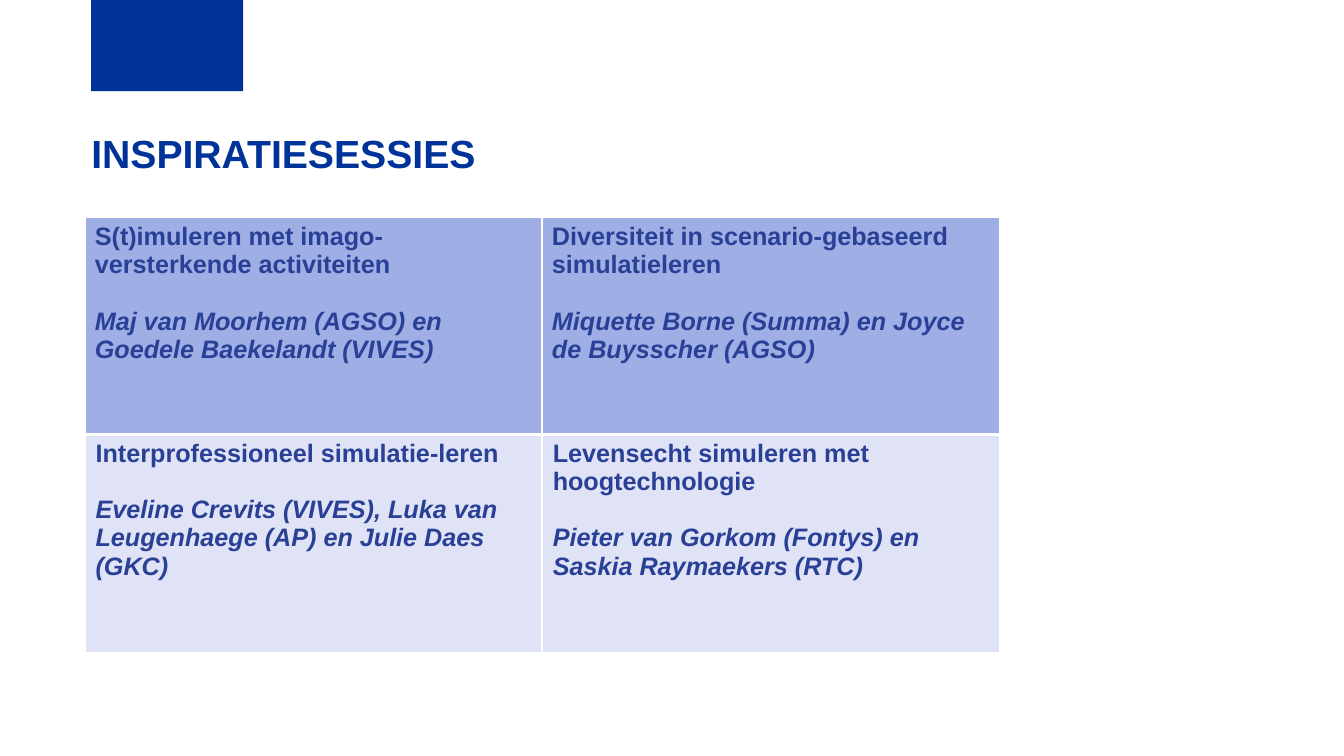
from dataclasses import dataclass

from lxml.etree import SubElement
from pptx import Presentation
from pptx.dml.color import RGBColor
from pptx.enum.shapes import MSO_SHAPE
from pptx.enum.text import MSO_ANCHOR, PP_ALIGN
from pptx.oxml.ns import qn
from pptx.util import Cm, Pt


@dataclass(frozen=True)
class Theme:
    font: str = "Arial"
    brand: str = "003399"
    session_text: str = "294096"
    row_fills: tuple = ("9FAEE5", "DFE3F5")
    border: str = "FFFFFF"
    title_size: int = 28
    session_size: int = 18


THEME = Theme()

SESSIONS = [
    [
        ("S(t)imuleren met imago-versterkende activiteiten",
         "Maj van Moorhem (AGSO) en Goedele Baekelandt (VIVES)"),
        ("Diversiteit in scenario-gebaseerd simulatieleren",
         "Miquette Borne (Summa) en Joyce de Buysscher (AGSO)"),
    ],
    [
        ("Interprofessioneel simulatie-leren",
         "Eveline Crevits (VIVES), Luka van Leugenhaege (AP) en Julie Daes (GKC)"),
        ("Levensecht simuleren met hoogtechnologie",
         "Pieter van Gorkom (Fontys) en Saskia Raymaekers (RTC)"),
    ],
]


def style_font(paragraph, size, color, italic=False):
    font = paragraph.font
    font.name = THEME.font
    font.size = Pt(size)
    font.bold = True
    font.italic = italic
    font.color.rgb = RGBColor.from_string(color)


def add_border(cell, side, points):
    line = SubElement(cell._tc.get_or_add_tcPr(), qn(f"a:{side}"), w=str(Pt(points)))
    fill = SubElement(line, qn("a:solidFill"))
    SubElement(fill, qn("a:srgbClr"), val=THEME.border)


presentation = Presentation()
presentation.slide_width = Cm(33.87)
presentation.slide_height = Cm(19.05)
slide = presentation.slides.add_slide(presentation.slide_layouts[5])

# Brand block at the top edge
brand_block = slide.shapes.add_shape(MSO_SHAPE.RECTANGLE, Cm(2.3), Cm(0), Cm(3.83), Cm(2.3))
brand_block.shadow.inherit = False
brand_block.fill.solid()
brand_block.fill.fore_color.rgb = RGBColor.from_string(THEME.brand)
brand_block.line.fill.background()

# Title
title = slide.shapes.title
title.left, title.top, title.width, title.height = Cm(2.3), Cm(3.4), Cm(19.46), Cm(3)
heading = title.text_frame
heading.margin_left = heading.margin_top = heading.margin_right = heading.margin_bottom = 0
heading.vertical_anchor = MSO_ANCHOR.TOP
heading.word_wrap = True
heading.text = "INSPIRATIESESSIES"
heading.paragraphs[0].alignment = PP_ALIGN.LEFT
heading.paragraphs[0].line_spacing = 0.9
style_font(heading.paragraphs[0], THEME.title_size, THEME.brand)

# Session table: topic above its speakers in every cell
session_table = slide.shapes.add_table(
    2, 2, Cm(2.14), Cm(5.49), Cm(23.04), Cm(10.95)).table
session_table.first_row = False
session_table.horz_banding = False
session_table.rows[0].height = Cm(5.46)
session_table.rows[1].height = Cm(5.49)

for row, sessions in enumerate(SESSIONS):
    for column, (topic, speakers) in enumerate(sessions):
        cell = session_table.cell(row, column)

        # A thick line separates the two rows
        divider = {0: "lnB", 1: "lnT"}[row]
        for side in ("lnL", "lnR", "lnT", "lnB"):
            add_border(cell, side, 3 if side == divider else 1)
        cell.fill.solid()
        cell.fill.fore_color.rgb = RGBColor.from_string(THEME.row_fills[row])

        cell.margin_left = cell.margin_right = Cm(0.25 + 0.02 * row)
        cell.text = topic
        style_font(cell.text_frame.paragraphs[0], THEME.session_size, THEME.session_text)
        speaker_line = cell.text_frame.add_paragraph()
        speaker_line.text = speakers
        speaker_line.space_before = Pt(20)
        style_font(speaker_line, THEME.session_size, THEME.session_text, italic=True)

presentation.save("out.pptx")
